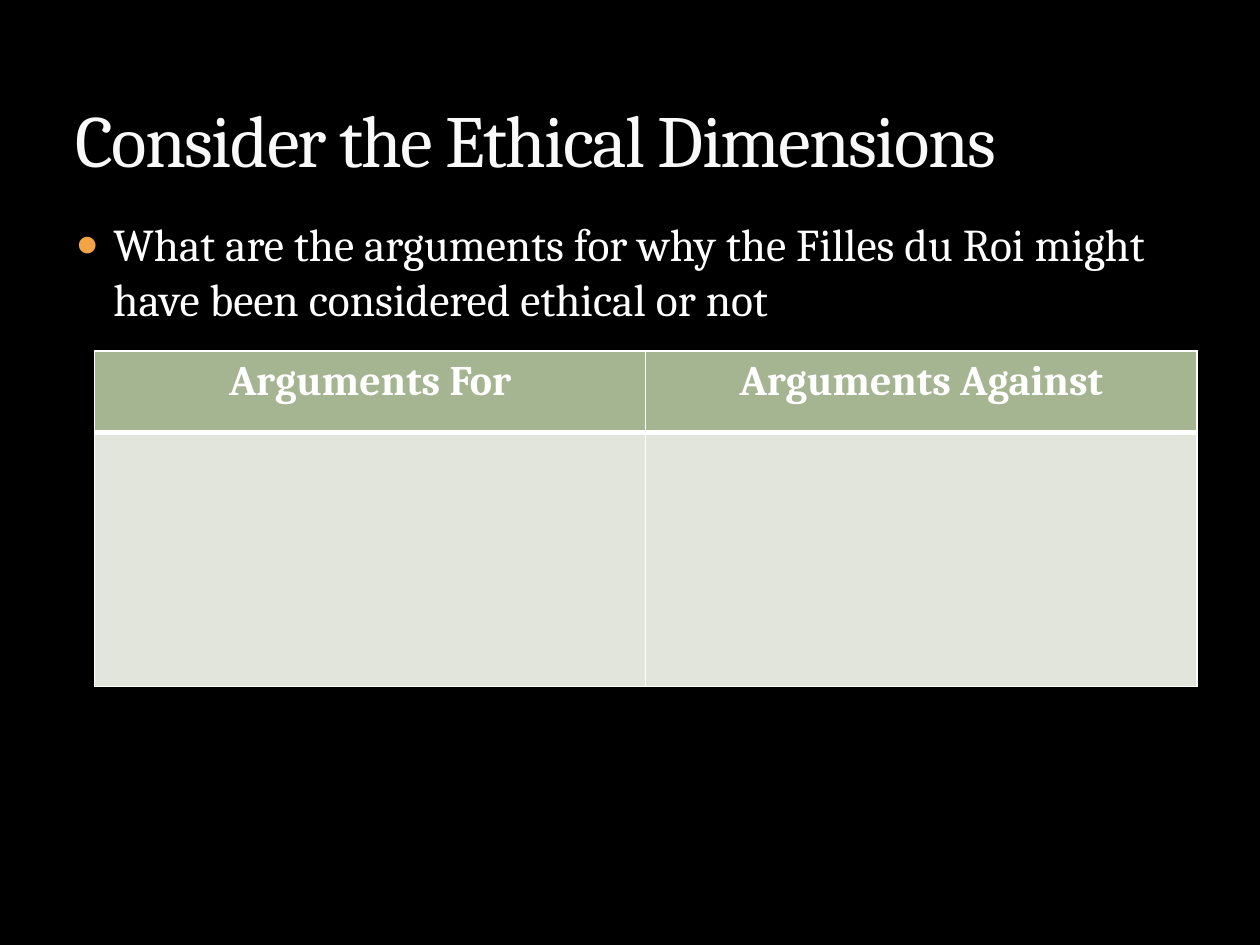
import pptx
import pptx.dml.color
import pptx.enum.text
import pptx.oxml
import pptx.oxml.ns
import pptx.util
from lxml import etree

Pt = pptx.util.Pt
RGB = pptx.dml.color.RGBColor
qn = pptx.oxml.ns.qn
Align = pptx.enum.text.PP_ALIGN
Anchor = pptx.enum.text.MSO_ANCHOR
Fit = pptx.enum.text.MSO_AUTO_SIZE

BLACK = RGB(0x00, 0x00, 0x00)
WHITE = RGB(0xFF, 0xFF, 0xFF)
PALE = RGB(0xF9, 0xF9, 0xF9)
OLIVE = RGB(0x3C, 0x44, 0x22)
ORANGE = RGB(0xF3, 0xA4, 0x47)
SAGE = RGB(0xA5, 0xB5, 0x92)
MIST = RGB(0xE1, 0xE5, 0xDC)
FONT = "Cambria"


def add_run(para, text, size, color, bold=False):
    run = para.add_run()
    run.text = text
    font = run.font
    font.name, font.size, font.bold = FONT, Pt(size), bold
    font.color.rgb = color
    return run


def add_line(parent, tag, width, color):
    """Add a solid line element and return its colour element."""
    line = etree.SubElement(parent, qn(tag), w=str(Pt(width)))
    fill = etree.SubElement(line, qn("a:solidFill"))
    return etree.SubElement(fill, qn("a:srgbClr"), val=str(color))


def set_box(shape, box):
    shape.left, shape.top, shape.width, shape.height = map(Pt, box)
    frame = shape.text_frame
    frame.word_wrap = True
    frame.auto_size = Fit.NONE
    return frame


def add_title(slide, box, text):
    frame = set_box(slide.shapes.title, box)
    frame.vertical_anchor = Anchor.BOTTOM
    para = frame.paragraphs[0]
    para.alignment = Align.LEFT
    props = add_run(para, text, 42, PALE).font._element
    # Tight letters with a faint outline
    props.set("spc", "-100")
    tint = add_line(props, "a:ln", 0.25, OLIVE)
    etree.SubElement(tint, qn("a:alpha"), val="25000")
    props.insert(0, props.find(qn("a:ln")))


def add_body(slide, box, text):
    frame = set_box(slide.placeholders[1], box)
    frame.vertical_anchor = Anchor.TOP
    para = frame.paragraphs[0]
    para.space_before = Pt(6)
    add_run(para, text, 26, WHITE)
    # Orange bullet with a hanging indent
    props = para._p.get_or_add_pPr()
    props.set("marL", str(Pt(21.6)))
    props.set("indent", str(Pt(-21.6)))
    tint = etree.SubElement(props, qn("a:buClr"))
    etree.SubElement(tint, qn("a:srgbClr"), val=str(ORANGE))
    etree.SubElement(props, qn("a:buSzPct"), val="85000")
    etree.SubElement(props, qn("a:buChar"), char="●")


def add_grid(slide, box, heads, rows):
    shape = slide.shapes.add_table(len(rows), len(heads), *map(Pt, box))
    table = shape.table
    for col in table.columns:
        col.width = Pt(box[2] / len(heads))
    for i, height in enumerate(rows):
        table.rows[i].height = Pt(height)
        # The rule under the heading row is the thick one
        above, below = (1, 3) if i == 0 else (3 if i == 1 else 1, 1)
        for j, head in enumerate(heads):
            cell = table.cell(i, j)
            props = cell._tc.get_or_add_tcPr()
            for side, width in zip("LRTB", (1, 1, above, below)):
                add_line(props, "a:ln" + side, width, WHITE)
            cell.fill.solid()
            cell.fill.fore_color.rgb = MIST if i else SAGE
            if i == 0:
                para = cell.text_frame.paragraphs[0]
                para.alignment = Align.CENTER
                add_run(para, head, 24, WHITE, True)


def main():
    deck = pptx.Presentation()
    deck.slide_width, deck.slide_height = Pt(720), Pt(540)
    slide = deck.slides.add_slide(deck.slide_layouts[1])
    slide.background.fill.solid()
    slide.background.fill.fore_color.rgb = BLACK

    add_body(slide, (36, 120, 648, 360),
             "What are the arguments for why the Filles du Roi might "
             "have been considered ethical or not")
    add_title(slide, (36, 12, 648, 96), "Consider the Ethical Dimensions")
    add_grid(slide, (54, 200.7, 630, 191.5),
             ("Arguments For", "Arguments Against"), (46.5, 145))
    deck.save("out.pptx")


if __name__ == "__main__":
    main()
